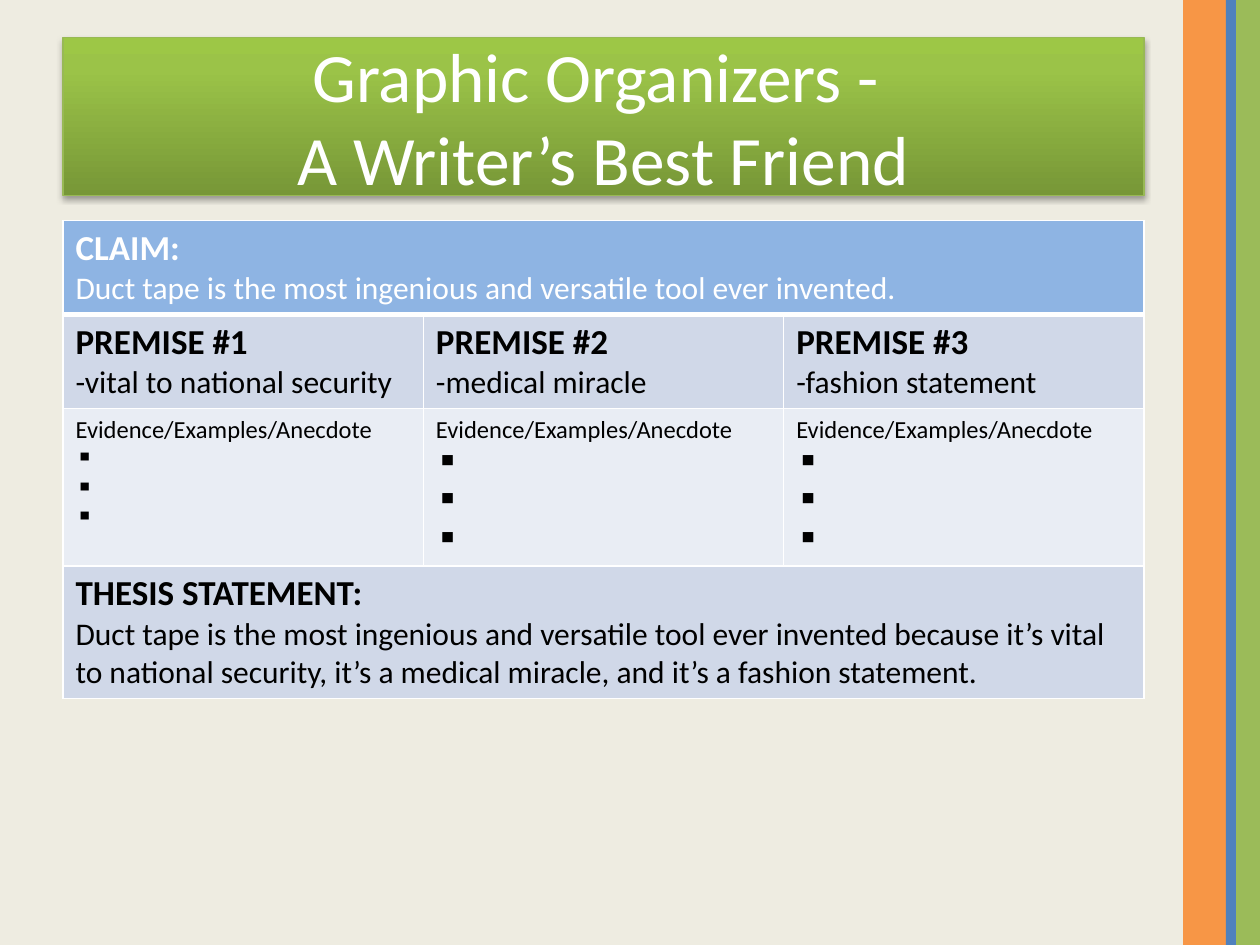
from lxml import etree
from pptx import Presentation
from pptx.dml.color import RGBColor
from pptx.enum import shapes, text
from pptx.oxml import ns
from pptx.util import Inches, Pt

FONT = "Calibri"
WHITE = RGBColor(0xFF, 0xFF, 0xFF)
BLACK = RGBColor(0, 0, 0)
CREAM = RGBColor(0xEE, 0xEC, 0xE1)
ORANGE = RGBColor(0xF7, 0x96, 0x46)
BLUE = RGBColor(0x4F, 0x81, 0xBD)
GREEN = RGBColor(0x9B, 0xBB, 0x59)
TITLE_LINE = RGBColor(0x98, 0xB9, 0x55)
CLAIM_FILL = RGBColor(0x8E, 0xB4, 0xE3)
BAND_DARK = RGBColor(0xD0, 0xD8, 0xE8)
BAND_LIGHT = RGBColor(0xE9, 0xED, 0xF4)

TITLE_STOPS = [(0, "779737"), (80, "9BC348"), (100, "9DC746")]
PREMISES = ["vital to national security", "medical miracle", "fashion statement"]
BULLET_SIZES = [14, 18, 18]
ROW_HEIGHTS = [0.5, 0.58, 0.97, 0.97]
LEFT, WIDTH = 0.5, 8.58


def add_xml(parent, tag, **attributes):
    element = etree.SubElement(parent, ns.qn(tag))
    for name, value in attributes.items():
        element.set(name, str(value))
    return element


def set_font(font, **values):
    color = values.pop("color")
    for name, value in {"name": FONT, **values}.items():
        setattr(font, name, value)
    font.color.rgb = color


def add_box(slide, left, top, width, height, fill=None):
    shape = slide.shapes.add_shape(
        shapes.MSO_SHAPE.RECTANGLE,
        Inches(left), Inches(top), Inches(width), Inches(height))
    shape.shadow.inherit = False
    shape.line.fill.background()
    if fill is not None:
        shape.fill.solid()
        shape.fill.fore_color.rgb = fill
    return shape


def set_title_gradient(shape):
    shape.fill.gradient()
    shape.fill.gradient_angle = 90
    stops = shape.fill._fill._gradFill.find(ns.qn("a:gsLst"))
    for stop in list(stops):
        stops.remove(stop)
    for position, color in TITLE_STOPS:
        stop = add_xml(stops, "a:gs", pos=position * 1000)
        add_xml(stop, "a:srgbClr", val=color)


def set_title_shadow(shape):
    effects = shape._element.spPr.find(ns.qn("a:effectLst"))
    shadow = add_xml(effects, "a:outerShdw", blurRad=Pt(3.1), dist=Pt(1.8),
                     dir=90 * 60000, rotWithShape=0)
    color = add_xml(shadow, "a:srgbClr", val="000000")
    add_xml(color, "a:alpha", val=35000)


def add_title(slide):
    shape = add_box(slide, LEFT, 0.3, WIDTH, 1.25)
    set_title_gradient(shape)
    set_title_shadow(shape)
    shape.line.color.rgb = TITLE_LINE
    shape.line.width = Pt(0.75)
    frame = shape.text_frame
    frame.word_wrap = True
    frame.vertical_anchor = text.MSO_ANCHOR.MIDDLE
    paragraph = frame.paragraphs[0]
    paragraph.alignment = text.PP_ALIGN.CENTER
    first = paragraph.add_run()
    first.text = "Graphic Organizers - "
    paragraph.add_line_break()
    second = paragraph.add_run()
    second.text = "A Writer’s Best Friend"
    for run in (first, second):
        set_font(run.font, size=Pt(39.6), color=WHITE)


def set_borders(cell, bottom=1):
    properties = cell._tc.get_or_add_tcPr()
    widths = {"a:lnL": 1, "a:lnR": 1, "a:lnT": 1, "a:lnB": bottom}
    for tag, width in widths.items():
        line = add_xml(properties, tag, w=Pt(width))
        add_xml(add_xml(line, "a:solidFill"), "a:srgbClr", val=str(WHITE))


def add_bullet(paragraph):
    properties = paragraph._p.get_or_add_pPr()
    properties.set("marL", str(Inches(0.31)))
    properties.set("indent", str(-Inches(0.31)))
    add_xml(properties, "a:buChar", char="▪")


def fill_cell(cell, lines, fill, color=BLACK):
    """Write lines of (wording, size, bold, bulleted) into a filled cell."""
    cell.fill.solid()
    cell.fill.fore_color.rgb = fill
    frame = cell.text_frame
    for index, (wording, size, bold, bulleted) in enumerate(lines):
        paragraph = frame.add_paragraph() if index else frame.paragraphs[0]
        if bulleted:
            add_bullet(paragraph)
        run = paragraph.add_run()
        run.text = wording
        set_font(run.font, size=Pt(size), bold=bold, color=color)


def heading_and_body(heading, body):
    return [(heading, 20, True, False), (body, 18, False, False)]


def add_organizer(slide):
    frame = slide.shapes.add_table(
        len(ROW_HEIGHTS), len(PREMISES),
        Inches(LEFT), Inches(1.75), Inches(WIDTH), Inches(3.77))
    table = frame.table
    table.first_row = table.horz_banding = False
    for row, height in zip(table.rows, ROW_HEIGHTS):
        row.height = Inches(height)
    frame.height = Inches(3.77)
    for index, row in enumerate(table.rows):
        for cell in row.cells:
            set_borders(cell, bottom=1 if index else 3)
    for row in (0, 3):
        table.cell(row, 0).merge(table.cell(row, 2))

    fill_cell(table.cell(0, 0), heading_and_body(
        "CLAIM:",
        "Duct tape is the most ingenious and versatile tool ever invented."),
        CLAIM_FILL, WHITE)
    for column, (premise, size) in enumerate(zip(PREMISES, BULLET_SIZES)):
        fill_cell(table.cell(1, column), heading_and_body(
            f"PREMISE #{column + 1}", f"-{premise}"), BAND_DARK)
        evidence = [("Evidence/Examples/Anecdote", 14, False, False)]
        evidence += [(" ", size, False, True)] * 3
        fill_cell(table.cell(2, column), evidence, BAND_LIGHT)
    fill_cell(table.cell(3, 0), heading_and_body(
        "THESIS STATEMENT:",
        "Duct tape is the most ingenious and versatile tool ever invented "
        "because it’s vital to national security, it’s a medical miracle, "
        "and it’s a fashion statement."), BAND_DARK)


def main():
    presentation = Presentation()
    presentation.slide_width = Inches(10)
    presentation.slide_height = Inches(7.5)
    slide = presentation.slides.add_slide(presentation.slide_layouts[6])
    slide.background.fill.solid()
    slide.background.fill.fore_color.rgb = CREAM
    for left, width, color in [(9.39, 0.35, ORANGE), (9.81, 0.19, GREEN),
                               (9.73, 0.08, BLUE)]:
        add_box(slide, left, 0, width, 7.5, color)
    add_title(slide)
    add_organizer(slide)
    presentation.save("out.pptx")


if __name__ == "__main__":
    main()
